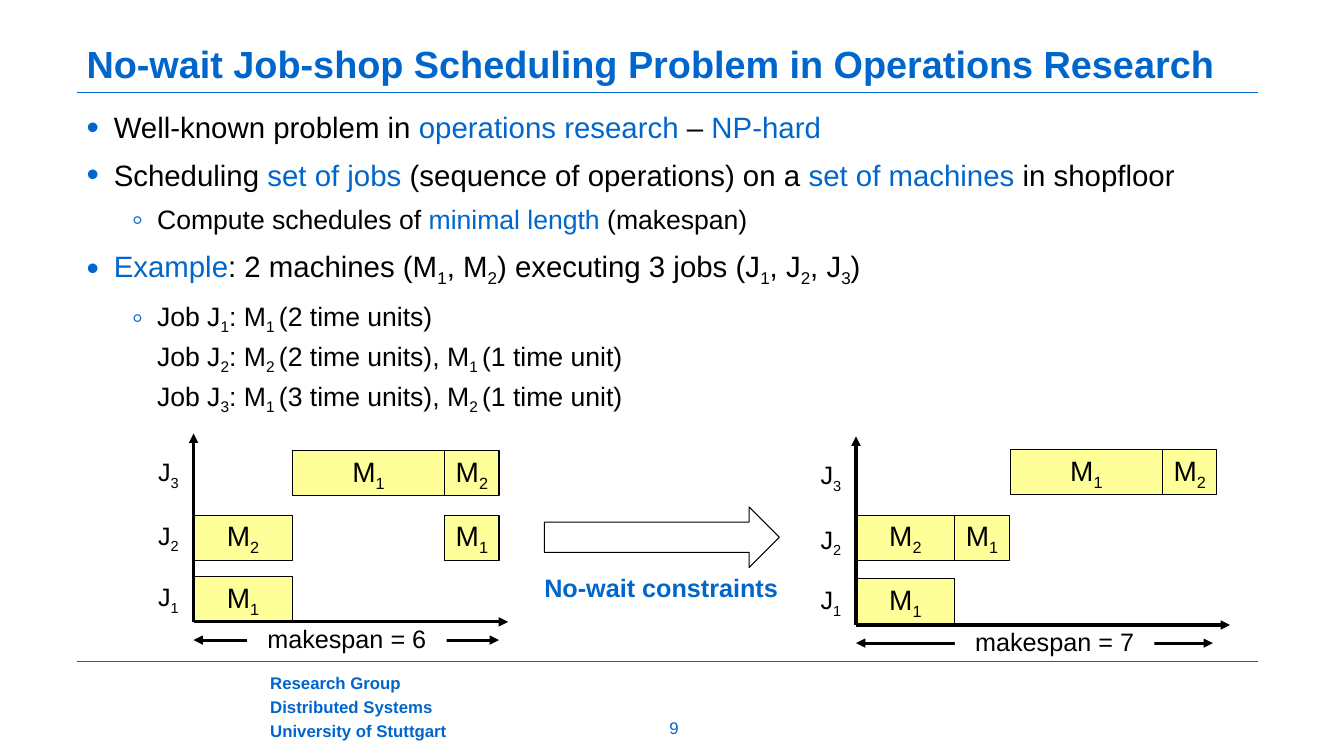
from lxml.etree import SubElement
from pptx import Presentation
from pptx.dml.color import RGBColor
from pptx.enum.shapes import MSO_CONNECTOR, MSO_SHAPE
from pptx.enum.text import MSO_ANCHOR, PP_ALIGN
from pptx.oxml.ns import qn
from pptx.util import Inches, Pt

COLORS = {"blue": "0066CC", "black": "000000", "yellow": "FFFF99", "white": "FFFFFF"}
FONT = "Arial"
DURATION_WIDTH = {1: 0.54, 2: 0.98, 3: 1.51}
BULLETS = [("•", 0.27, -0.27, 21), ("◦", 0.7, -0.25, 19)]
BODY = [
    (0, "Well-known problem in *operations research *– *NP-hard*"),
    (0, "Scheduling *set of jobs *(sequence of operations) on a *set of machines *in shopfloor"),
    (1, "Compute schedules of *minimal length *(makespan)"),
    (0, "*Example*: 2 machines (M~1~, M~2~) executing 3 jobs (J~1~, J~2~, J~3~)"),
    (1, "Job J~1~: M~1 ~(2 time units)\n"
        "Job J~2~: M~2 ~(2 time units), M~1 ~(1 time unit)\n"
        "Job J~3~: M~1 ~(3 time units), M~2 ~(1 time unit)"),
]


def rgb(name):
    return RGBColor.from_string(COLORS[name])


def add_run(p, text, size, color, bold=False, subscript=False):
    r = p.add_run()
    r.text = text
    r.font.name = FONT
    r.font.size = Pt(size)
    r.font.bold = bold
    r.font.color.rgb = rgb(color)
    if subscript:
        r.font._element.set("baseline", "-25000")


def add_rich_text(p, markup, size, color="black", bold=False):
    for i, line in enumerate(markup.split("\n")):
        if i:
            p.add_line_break()
        for j, colored in enumerate(line.split("*")):
            for k, text in enumerate(colored.split("~")):
                if text:
                    add_run(p, text, size, "blue" if j % 2 else color, bold, k % 2 == 1)


def set_frame(tf, insets=(0.1, 0.05), anchor=MSO_ANCHOR.TOP):
    tf.word_wrap = True
    tf.vertical_anchor = anchor
    tf.margin_left = tf.margin_right = Inches(insets[0])
    tf.margin_top = tf.margin_bottom = Inches(insets[1])


def add_text(s, box, lines, size, color="black", bold=False, align=PP_ALIGN.LEFT,
             insets=(0.1, 0.05), anchor=MSO_ANCHOR.TOP, spacing=None, after=None):
    tf = s.shapes.add_textbox(*map(Inches, box)).text_frame
    set_frame(tf, insets, anchor)
    for i, line in enumerate(lines):
        p = tf.add_paragraph() if i else tf.paragraphs[0]
        p.alignment = align
        p.line_spacing = spacing
        p.space_after = after
        add_rich_text(p, line, size, color, bold)


def add_bullet(p, level):
    char, left, indent, size = BULLETS[level]
    p.level = level
    pPr = p._p.get_or_add_pPr()
    pPr.set("marL", str(Inches(left)))
    pPr.set("indent", str(Inches(indent)))
    clr = SubElement(pPr, qn("a:buClr"))
    SubElement(clr, qn("a:srgbClr"), val=COLORS["blue"])
    SubElement(pPr, qn("a:buSzPct"), val="120000")
    SubElement(pPr, qn("a:buFont"), typeface=FONT)
    SubElement(pPr, qn("a:buChar"), char=char)
    return size


def add_body(s):
    tf = s.shapes.add_textbox(*map(Inches, (0.76, 1, 11.71, 4.86))).text_frame
    set_frame(tf)
    for i, (level, markup) in enumerate(BODY):
        p = tf.add_paragraph() if i else tf.paragraphs[0]
        p.line_spacing = 1.1
        if i:
            before = SubElement(p._p.get_or_add_pPr(), qn("a:spcBef"))
            SubElement(before, qn("a:spcPct"), val="30000")
        add_rich_text(p, markup, add_bullet(p, level))


def add_shape(s, kind, box, fill, outlined=True):
    sp = s.shapes.add_shape(kind, *map(Inches, box))
    sp.shadow.inherit = False
    sp.fill.solid()
    sp.fill.fore_color.rgb = rgb(fill)
    if outlined:
        sp.line.color.rgb = rgb("black")
        sp.line.width = Pt(0.75)
    else:
        sp.line.fill.background()
    return sp


def add_label(sp, markup, size, insets=(0.1, 0.05), anchor=MSO_ANCHOR.MIDDLE):
    set_frame(sp.text_frame, insets, anchor)
    p = sp.text_frame.paragraphs[0]
    p.alignment = PP_ALIGN.CENTER
    add_rich_text(p, markup, size)


def add_line(s, start, end, color="black", width=2.25, arrows=()):
    c = s.shapes.add_connector(MSO_CONNECTOR.STRAIGHT, *map(Inches, start + end))
    c.line.color.rgb = rgb(color)
    c.line.width = Pt(width)
    for arrow in arrows:
        SubElement(c.line._get_or_add_ln(), qn(f"a:{arrow}"), type="triangle")
    SubElement(c._element.spPr, qn("a:effectLst"))


def add_gantt(s, x, y, axis_length, makespan, span_length, span_offset, jobs):
    add_line(s, (x, y + 0.18), (x + span_length, y + 0.18), arrows=("headEnd", "tailEnd"))
    sp = add_shape(s, MSO_SHAPE.RECTANGLE, (x + span_offset, y + 0.01, 1.98, 0.3), "white", False)
    add_label(sp, f"makespan = {makespan}", 18, (0.1, 0), MSO_ANCHOR.TOP)
    for job, label_top, top, operations in jobs:
        add_text(s, (x - 0.45, label_top, 0.54, 0.43), [f"J~{job}~"], 18)
        for machine, start, duration in operations:
            box = (x + start, top, DURATION_WIDTH[duration], 0.45)
            sp = add_shape(s, MSO_SHAPE.RECTANGLE, box, "yellow")
            add_label(sp, f"M~{machine}~", 20)
    add_line(s, (x, y), (x, y - 1.87), arrows=("tailEnd",))
    add_line(s, (x, y), (x + axis_length, y), arrows=("tailEnd",))


def main():
    prs = Presentation()
    prs.slide_width, prs.slide_height = Inches(13.33), Inches(7.5)
    s = prs.slides.add_slide(prs.slide_layouts[6])
    for y in (0.92, 6.56):
        add_line(s, (0.76, y), (12.48, y), "blue", 1)
    add_text(s, (2.68, 6.7, 2.38, 0.61),
             ["Research Group", "Distributed Systems", "University of Stuttgart"],
             12, "blue", True, insets=(0, 0), spacing=0.9, after=Pt(4))
    add_text(s, (0.76, 0.29, 11.71, 0.63),
             ["No-wait Job-shop Scheduling Problem in Operations Research"],
             27, "blue", True, anchor=MSO_ANCHOR.MIDDLE, spacing=1.1)
    add_body(s)
    add_text(s, (5.54, 7.08, 2.29, 0.23), ["9"], 12, "blue",
             align=PP_ALIGN.CENTER, insets=(0.09, 0.04))
    add_gantt(s, 1.92, 6.17, 3.12, 6, 3.03, 0.53, [
        (1, 5.72, 5.72, [(1, 0, 2)]),
        (2, 5.11, 5.11, [(2, 0, 2), (1, 2.49, 1)]),
        (3, 4.48, 4.47, [(1, 0.98, 3), (2, 2.49, 1)]),
    ])
    add_shape(s, MSO_SHAPE.RIGHT_ARROW, (5.4, 5.03, 2.33, 0.6), "white")
    add_text(s, (5.3, 5.63, 2.53, 0.4), ["No-wait constraints"], 18, "blue", True)
    add_gantt(s, 8.49, 6.2, 3.71, 7, 3.54, 0.98, [
        (1, 5.75, 5.74, [(1, 0, 2)]),
        (2, 5.15, 5.11, [(2, 0, 2), (1, 0.98, 1)]),
        (3, 4.51, 4.46, [(1, 1.53, 3), (2, 3.04, 1)]),
    ])
    prs.save("out.pptx")


if __name__ == "__main__":
    main()
